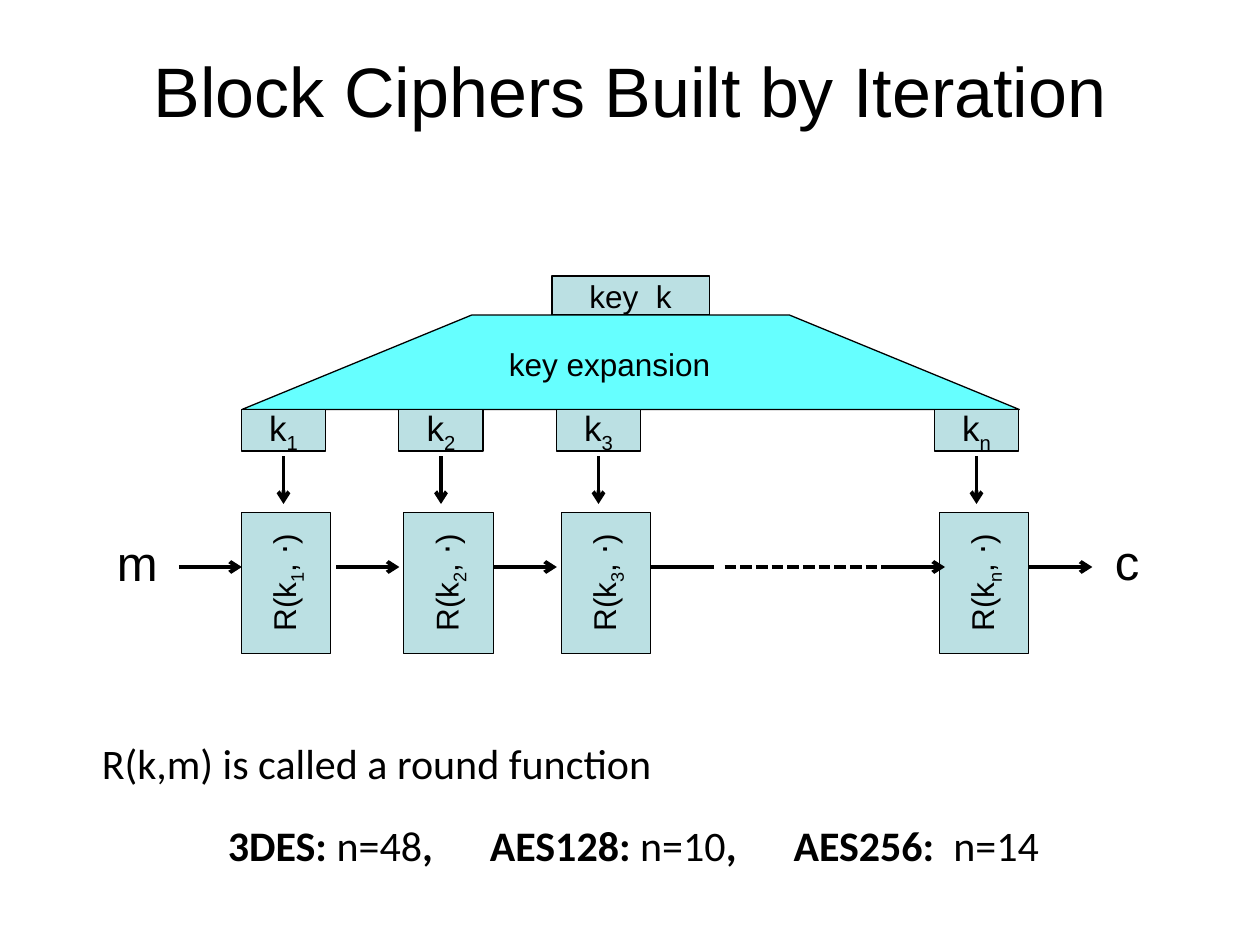
from dataclasses import dataclass

from lxml import etree
from pptx import Presentation
from pptx import util as u
from pptx.dml.color import RGBColor
from pptx.enum import dml, shapes, text
from pptx.oxml.ns import qn


@dataclass(frozen=True)
class Theme:
    ink: str = "000000"
    block: str = "BBE0E3"
    expansion: str = "66FFFF"
    sans: str = "Arial"
    body: str = "Calibri"
    title_size: int = 40
    body_size: int = 24
    label_size: int = 18
    key_size: int = 20
    end_size: int = 28
    outline: float = 0.75
    arrow: float = 2.25


THEME = Theme()
FLOW_Y = 4.5
KEY_WIDTH = 0.67
ROUNDS = [("1", 2.25, 2.27), ("2", 3.5, 3.56), ("3", 4.75, 4.81), ("n", 7.75, 7.81)]


def add_span(para, words, size, font=THEME.sans, bold=False, subscript=False):
    span = para.add_run()
    span.text = words
    span.font.size = u.Pt(size)
    span.font.name = font
    span.font.bold = bold
    span.font.color.rgb = RGBColor.from_string(THEME.ink)
    if subscript:
        span.font._element.set("baseline", "-25000")


def add_box(page, left, top, width, height, wrap=True):
    box = page.shapes.add_textbox(*map(u.Inches, (left, top, width, height)))
    box.text_frame.word_wrap = wrap
    return box


def add_label(page, words, size, left, top, width, height):
    box = add_box(page, left, top, width, height, wrap=False)
    add_span(box.text_frame.paragraphs[0], words, size)


def add_block(page, kind, fill, left, top, width, height):
    block = page.shapes.add_shape(kind, *map(u.Inches, (left, top, width, height)))
    block.shadow.inherit = False
    block.fill.solid()
    block.fill.fore_color.rgb = RGBColor.from_string(fill)
    block.line.color.rgb = RGBColor.from_string(THEME.ink)
    block.line.width = u.Pt(THEME.outline)
    return block


def add_text_block(page, spans, size, left, top, width, height):
    block = add_block(page, shapes.MSO_SHAPE.RECTANGLE, THEME.block, left, top, width, height)
    block.text_frame.vertical_anchor = text.MSO_ANCHOR.MIDDLE
    para = block.text_frame.paragraphs[0]
    para.alignment = text.PP_ALIGN.CENTER
    for words, subscript in spans:
        add_span(para, words, size, subscript=subscript)
    return block


def add_line(page, start, end, arrow=True, dashed=False):
    line = page.shapes.add_connector(
        shapes.MSO_CONNECTOR.STRAIGHT, *map(u.Inches, (*start, *end)))
    line.line.color.rgb = RGBColor.from_string(THEME.ink)
    line.line.width = u.Pt(THEME.arrow)
    if dashed:
        line.line.dash_style = dml.MSO_LINE.SQUARE_DOT
    if arrow:
        etree.SubElement(line.line._get_or_add_ln(), qn("a:tailEnd"), type="arrow")
    etree.SubElement(line._element.spPr, qn("a:effectLst"))


def add_title(page):
    box = add_box(page, 0.5, 0.25, 9, 0.92)
    box.text_frame.vertical_anchor = text.MSO_ANCHOR.MIDDLE
    para = box.text_frame.paragraphs[0]
    para.alignment = text.PP_ALIGN.CENTER
    add_span(para, "Block Ciphers Built by Iteration", THEME.title_size)


def add_tab_stops(para, stops):
    tabs = etree.SubElement(para._p.get_or_add_pPr(), qn("a:tabLst"))
    for stop in stops:
        etree.SubElement(tabs, qn("a:tab"), pos=str(u.Inches(stop)), algn="l")


def add_notes_on_rounds(page):
    frame = add_box(page, 0.71, 5.8, 8.92, 1.12).text_frame
    add_span(frame.paragraphs[0], "R(k,m) is called a round function",
             THEME.body_size, THEME.body)
    para = frame.add_paragraph()
    add_tab_stops(para, (1, 3.08, 5.49))
    para.space_before = u.Pt(18.2)
    for words, bold in (("\t3DES: ", True), ("n=48", False),
                        (",\tAES128: ", True), ("n=10", False),
                        (",\tAES256:  ", True), ("n=14", False)):
        add_span(para, words, THEME.body_size, THEME.body, bold)


def add_key_expansion(page):
    add_text_block(page, [("key  k", False)], THEME.label_size, 4.38, 2.19, 1.25, 0.31)
    funnel = add_block(page, shapes.MSO_SHAPE.TRAPEZOID, THEME.expansion,
                       1.92, 2.5, 6.17, 0.75)
    funnel.adjustments[0] = 2.433
    add_label(page, "key expansion", THEME.label_size, 3.94, 2.69, 1.81, 0.4)


def add_round(page, index, key_x, round_x):
    add_text_block(page, [("k", False), (index, True)], THEME.key_size,
                   key_x - KEY_WIDTH / 2, 3.25, KEY_WIDTH, 0.33)
    width, height = 1.12, 0.71
    block = add_text_block(
        page, [("R(k", False), (index, True), (", ⋅)", False)], THEME.label_size,
        round_x - width / 2, 4.27, width, height)
    block.rotation = 270
    add_line(page, (key_x, 3.62), (key_x, 4))


def add_flow(page):
    for start in (1.42, 2.67, 3.92, 5.17, 7, 8.17):
        add_line(page, (start, FLOW_Y), (start + 0.5, FLOW_Y), arrow=start != 5.17)
    add_line(page, (5.75, FLOW_Y), (7, FLOW_Y), arrow=False, dashed=True)
    add_label(page, "m", THEME.end_size, 0.83, 4.18, 0.53, 0.57)
    add_label(page, "c", THEME.end_size, 8.75, 4.17, 0.42, 0.57)


def main():
    deck = Presentation()
    deck.slide_width = u.Inches(10)
    deck.slide_height = u.Inches(7.5)
    page = deck.slides.add_slide(deck.slide_layouts[6])
    add_title(page)
    add_notes_on_rounds(page)
    add_key_expansion(page)
    for index, key_x, round_x in ROUNDS:
        add_round(page, index, key_x, round_x)
    add_flow(page)
    deck.save("out.pptx")


if __name__ == "__main__":
    main()
